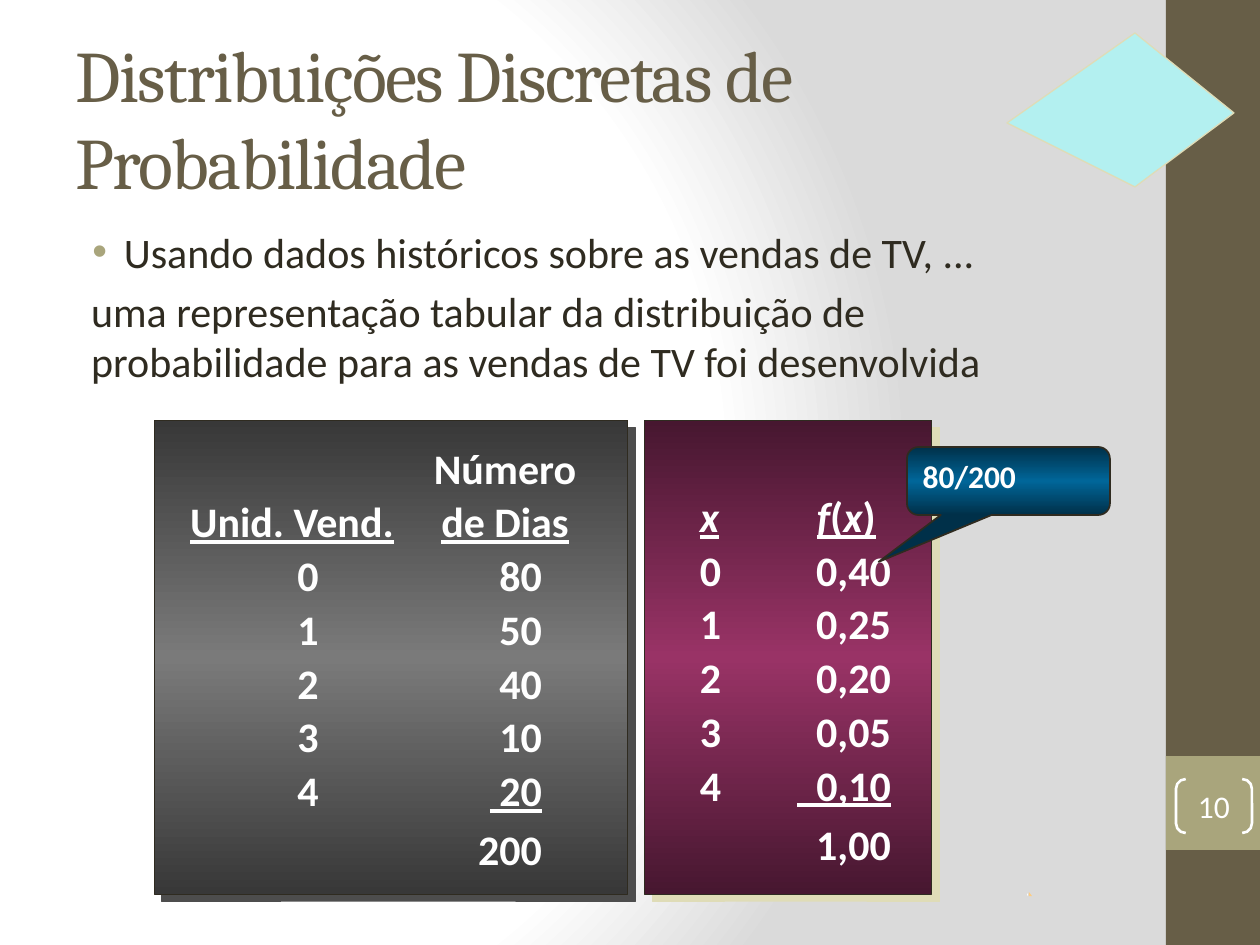
from lxml import etree
from pptx import Presentation
from pptx import util as u
from pptx.dml.color import RGBColor
from pptx.enum import shapes, text
from pptx.oxml.ns import qn

EMU_PER_PX = 914400 / 126
WHITE, BROWN, OLIVE, INK, SAND = "FFFFFF", "675E47", "A9A57C", "2F2B20", "DFDCB7"
KIND = shapes.MSO_SHAPE


def px(length):
    return u.Emu(round(length * EMU_PER_PX))


def rgb(value):
    return RGBColor.from_string(value)


def add_xml(parent, tag, **attributes):
    values = {name: str(value) for name, value in attributes.items()}
    return etree.SubElement(parent, qn(tag), values)


def set_gradient(fill, owner, stops, circle=None):
    """Fill with (percent, colour) stops, vertically or around a circle focus."""
    fill.gradient()
    gradient = owner.find(".//" + qn("a:gradFill"))
    for child in list(gradient):
        gradient.remove(child)
    stop_list = add_xml(gradient, "a:gsLst")
    for percent, colour in stops:
        stop = add_xml(stop_list, "a:gs", pos=percent * 1000)
        add_xml(stop, "a:srgbClr", val=colour)
    if circle:
        focus = add_xml(gradient, "a:path", path="circle")
        add_xml(focus, "a:fillToRect", **circle)
    else:
        add_xml(gradient, "a:lin", ang=5400000, scaled=0)


class SlideBuilder:
    def __init__(self, slide, body_font="Calibri", title_font="Cambria"):
        self.slide = slide
        self.body_font = body_font
        self.title_font = title_font

    def finish(self, shape, fill=None, line=None, width=1.0):
        """Apply a solid, vertical gradient (edge, middle) or empty fill, and a line."""
        shape.shadow.inherit = False
        if isinstance(fill, tuple):
            edge, middle = fill
            set_gradient(shape.fill, shape.element, [(0, edge), (50, middle), (100, edge)])
        elif fill:
            shape.fill.solid()
            shape.fill.fore_color.rgb = rgb(fill)
        else:
            shape.fill.background()
        if line:
            shape.line.color.rgb = rgb(line)
            shape.line.width = u.Pt(width)
        else:
            shape.line.fill.background()
        return shape

    def preset(self, kind, box, adjustments=(), **style):
        shape = self.slide.shapes.add_shape(kind, *map(px, box))
        for index, value in enumerate(adjustments):
            shape.adjustments[index] = value
        return self.finish(shape, **style)

    def polygon(self, points, **style):
        builder = self.slide.shapes.build_freeform(*points[0], scale=EMU_PER_PX)
        builder.add_line_segments(points[1:], close=True)
        return self.finish(builder.convert_to_shape(), **style)

    def panel(self, box, fill, shadow):
        shape = self.preset(KIND.RECTANGLE, box, fill=fill, line=INK, width=0.5)
        effects = shape.element.spPr.find(qn("a:effectLst"))
        outer = add_xml(effects, "a:outerShdw", dist=u.Pt(5.7), dir=2700000,
                        algn="ctr", rotWithShape=0)
        add_xml(outer, "a:srgbClr", val=shadow)

    def text_box(self, box, anchor=text.MSO_ANCHOR.TOP, margin=13):
        frame = self.slide.shapes.add_textbox(*map(px, box)).text_frame
        frame.word_wrap = True
        frame.vertical_anchor = anchor
        frame.margin_left = frame.margin_right = px(margin)
        return frame

    def style(self, paragraph, size, colour, bold=False, name=None):
        font = paragraph.font
        font.size, font.bold = u.Pt(size), bold
        font.name = name or self.body_font
        font.color.rgb = rgb(colour)

    def title(self, box, words):
        paragraph = self.text_box(box, text.MSO_ANCHOR.MIDDLE).paragraphs[0]
        run = paragraph.add_run()
        run.text = words
        self.style(paragraph, 41.4, BROWN, name=self.title_font)
        run.font._element.set("spc", "-100")

    def body(self, box, bullet, continuation):
        frame = self.text_box(box)
        first, second = frame.paragraphs[0], frame.add_paragraph()
        first.text, second.text = bullet, continuation
        properties = first._p.get_or_add_pPr()
        properties.set("marL", str(u.Inches(0.38)))
        properties.set("indent", str(u.Inches(-0.25)))
        add_xml(add_xml(properties, "a:buClr"), "a:srgbClr", val=OLIVE)
        add_xml(properties, "a:buFont", typeface="Arial")
        add_xml(properties, "a:buChar", char="•")
        second._p.get_or_add_pPr().set("marL", str(u.Inches(0.12)))
        for paragraph in frame.paragraphs:
            paragraph.space_before = u.Pt(4.8)
            self.style(paragraph, 24, INK)

    def columns(self, box, rows):
        """Set rows of (tab stops, runs); a run is (words, marks), marks from 'i' and 'u'."""
        frame = self.text_box(box, text.MSO_ANCHOR.MIDDLE, margin=0)
        for index, (stops, runs) in enumerate(rows):
            paragraph = frame.add_paragraph() if index else frame.paragraphs[0]
            tabs = add_xml(paragraph._p.get_or_add_pPr(), "a:tabLst")
            for position, align in stops:
                add_xml(tabs, "a:tab", pos=px(position), algn=align)
            paragraph.space_before = u.Pt(4.8)
            if index < len(rows) - 1:
                paragraph.line_spacing = 0.9
            self.style(paragraph, 24, WHITE, bold=True)
            for words, marks in runs:
                run = paragraph.add_run()
                run.text = words
                if "i" in marks:
                    run.font.italic = True
                if "u" in marks:
                    run.font.underline = True

    def label(self, shape, words, bold=False, align=text.PP_ALIGN.LEFT,
              anchor=text.MSO_ANCHOR.TOP):
        frame = shape.text_frame
        frame.vertical_anchor = anchor
        paragraph = frame.paragraphs[0]
        paragraph.text = words
        paragraph.alignment = align
        self.style(paragraph, 18, WHITE, bold=bold)
        return frame


def table_rows(headers, stops, values, total):
    """Rows 0 to 4 with their values, the last one underlined, then the total."""
    rows = [(stops, [(f"\t{count}\t{value}", "")]) for count, value in enumerate(values[:-1])]
    rows.append((stops, [(f"\t{len(rows)}\t", ""), (values[-1], "u")]))
    return headers + rows + [(stops[1:], [(f"\t{total}", "")])]


def main():
    presentation = Presentation()
    presentation.slide_width, presentation.slide_height = px(1260), px(945)
    slide = presentation.slides.add_slide(presentation.slide_layouts[6])
    set_gradient(slide.background.fill, slide.element,
                 [(0, WHITE), (75, WHITE), (100, "DADADA")],
                 circle={"l": 20000, "t": 50000, "r": 100000, "b": 50000})
    builder = SlideBuilder(slide)

    builder.preset(KIND.RECTANGLE, (1166, 0, 94, 945), fill=BROWN)
    builder.preset(KIND.RECTANGLE, (1166, 756, 94, 94), fill=OLIVE)
    builder.title((63, 38, 1050, 157), "Distribuições Discretas de Probabilidade")
    builder.body((63, 220, 1050, 661),
                 "Usando dados históricos sobre as vendas de TV, ...",
                 "uma representação tabular da distribuição de probabilidade "
                 "para as vendas de TV foi desenvolvida")
    brackets = builder.preset(KIND.DOUBLE_BRACKET, (1176, 779, 76, 54), [0.18],
                              line=WHITE, width=1.5)
    number = builder.label(brackets, "10", align=text.PP_ALIGN.CENTER,
                           anchor=text.MSO_ANCHOR.MIDDLE)
    number.margin_left = number.margin_right = number.margin_top = number.margin_bottom = 0
    builder.polygon([(1135, 187), (1234, 113), (1135, 33), (1007, 123)],
                    fill="B3F0F0", line=SAND, width=0.75)

    builder.panel((645, 420, 287, 474), ("471730", "993366"), SAND)
    builder.panel((154, 420, 474, 474), ("383838", "7A7A7A"), "4D4D4D")
    builder.polygon([(1029, 892), (1029, 896), (1032, 896)], fill="FFCC7F")
    builder.polygon([(1028, 893), (1027, 895), (1028, 896)], fill=WHITE)

    day_headers = [
        ([(351, "ctr")], [("\tNúmero", "")]),
        ([(138, "ctr"), (351, "ctr")],
         [("\t", ""), ("Unid. Vend.", "u"), ("\t", ""), ("de Dias", "u")]),
    ]
    builder.columns((154, 413, 474, 496), table_rows(
        day_headers, [(154, "ctr"), (388, "r")], ["80", "50", "40", "10", " 20"], "200"))
    probability_headers = [
        ([(55, "l"), (172, "l")],
         [("\t", ""), ("x", "iu"), ("\t", ""), ("f", "iu"), ("(", "u"), ("x", "iu"), (")", "u")]),
    ]
    builder.columns((645, 472, 287, 421), table_rows(
        probability_headers, [(55, "l"), (246, "r")],
        ["0,40", "0,25", "0,20", "0,05", "  0,10"], "1,00"))

    callout = builder.preset(KIND.ROUNDED_RECTANGULAR_CALLOUT, (907, 447, 203, 68),
                             [-0.64, 1.19, 0.17], fill=("003049", "006699"), line=INK)
    builder.label(callout, "80/200", bold=True)
    presentation.save("out.pptx")


if __name__ == "__main__":
    main()
